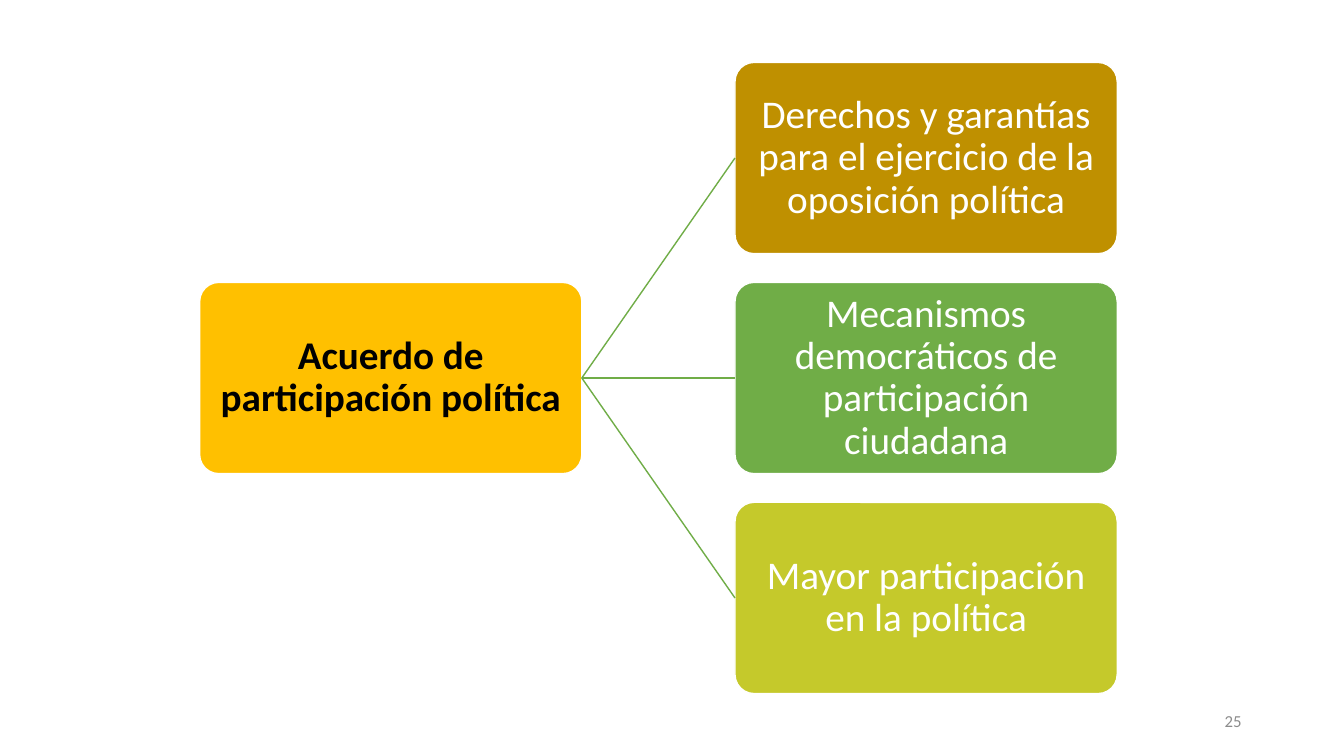
from lxml.etree import SubElement
from pptx import Presentation
from pptx.dml.color import RGBColor
from pptx.enum.shapes import MSO_CONNECTOR, MSO_SHAPE
from pptx.enum.text import MSO_ANCHOR, PP_ALIGN
from pptx.oxml.ns import qn
from pptx.util import Pt

BOX_WIDTH, BOX_HEIGHT, ROW_STEP = 273, 136.6, 157.1
ROOT_LEFT, BRANCH_LEFT = 142.6, 525
MIDDLE_TOP = 270 - BOX_HEIGHT / 2


def color(hex_code):
    return RGBColor.from_string(hex_code)


def topic_box(left, top, label, fill, text_color="FFFFFF", bold=False):
    box = slide.shapes.add_shape(MSO_SHAPE.ROUNDED_RECTANGLE, Pt(left), Pt(top),
                                 Pt(BOX_WIDTH), Pt(BOX_HEIGHT))
    box.adjustments[0] = 0.1
    box.shadow.inherit = False
    box.fill.solid()
    box.fill.fore_color.rgb = color(fill)
    box.line.color.rgb = color("FFFFFF")
    box.line.width = Pt(1)
    frame = box.text_frame
    frame_format = {"word_wrap": True, "vertical_anchor": MSO_ANCHOR.MIDDLE}
    for side in ("left", "right", "top", "bottom"):
        frame_format[f"margin_{side}"] = Pt(5.5)
    for name, value in frame_format.items():
        setattr(frame, name, value)
    paragraph = frame.paragraphs[0]
    paragraph.text = label
    paragraph.alignment = PP_ALIGN.CENTER
    paragraph.line_spacing = 0.9
    for name, value in {"name": "Calibri", "size": Pt(28), "bold": bold}.items():
        setattr(paragraph.font, name, value)
    paragraph.font.color.rgb = color(text_color)
    return box


presentation = Presentation()
presentation.slide_width, presentation.slide_height = Pt(960), Pt(540)
slide = presentation.slides.add_slide(presentation.slide_layouts[6])

# Agreement at the root
agreement = topic_box(ROOT_LEFT, MIDDLE_TOP, "Acuerdo de participación política",
                      "FFC000", "000000", True)

# Three branches, each joined to the agreement
branches = [
    ("Derechos y garantías para el ejercicio de la oposición política", "BF9000"),
    ("Mecanismos democráticos de participación ciudadana", "70AD47"),
    ("Mayor participación en la política", "C5C92B"),
]
for row, (label, fill) in enumerate(branches):
    branch = topic_box(BRANCH_LEFT, MIDDLE_TOP + (row - 1) * ROW_STEP, label, fill)
    link = slide.shapes.add_connector(MSO_CONNECTOR.STRAIGHT, 0, 0, 0, 0)
    link.begin_connect(agreement, 3)
    link.end_connect(branch, 1)
    link.line.color.rgb = color("70AD47")
    link.line.width = Pt(1)
    SubElement(link.element.spPr, qn("a:effectLst"))

# Page number
page_frame = slide.shapes.add_textbox(Pt(678), Pt(500.5), Pt(216), Pt(28.75)).text_frame
page_frame.word_wrap = True
page_frame.vertical_anchor = MSO_ANCHOR.MIDDLE
page_number = page_frame.paragraphs[0]
page_number.text = "25"
page_number.alignment = PP_ALIGN.RIGHT
page_number.font.name = "Calibri"
page_number.font.size = Pt(12)
page_number.font.color.rgb = color("8C8C8C")

presentation.save("out.pptx")
